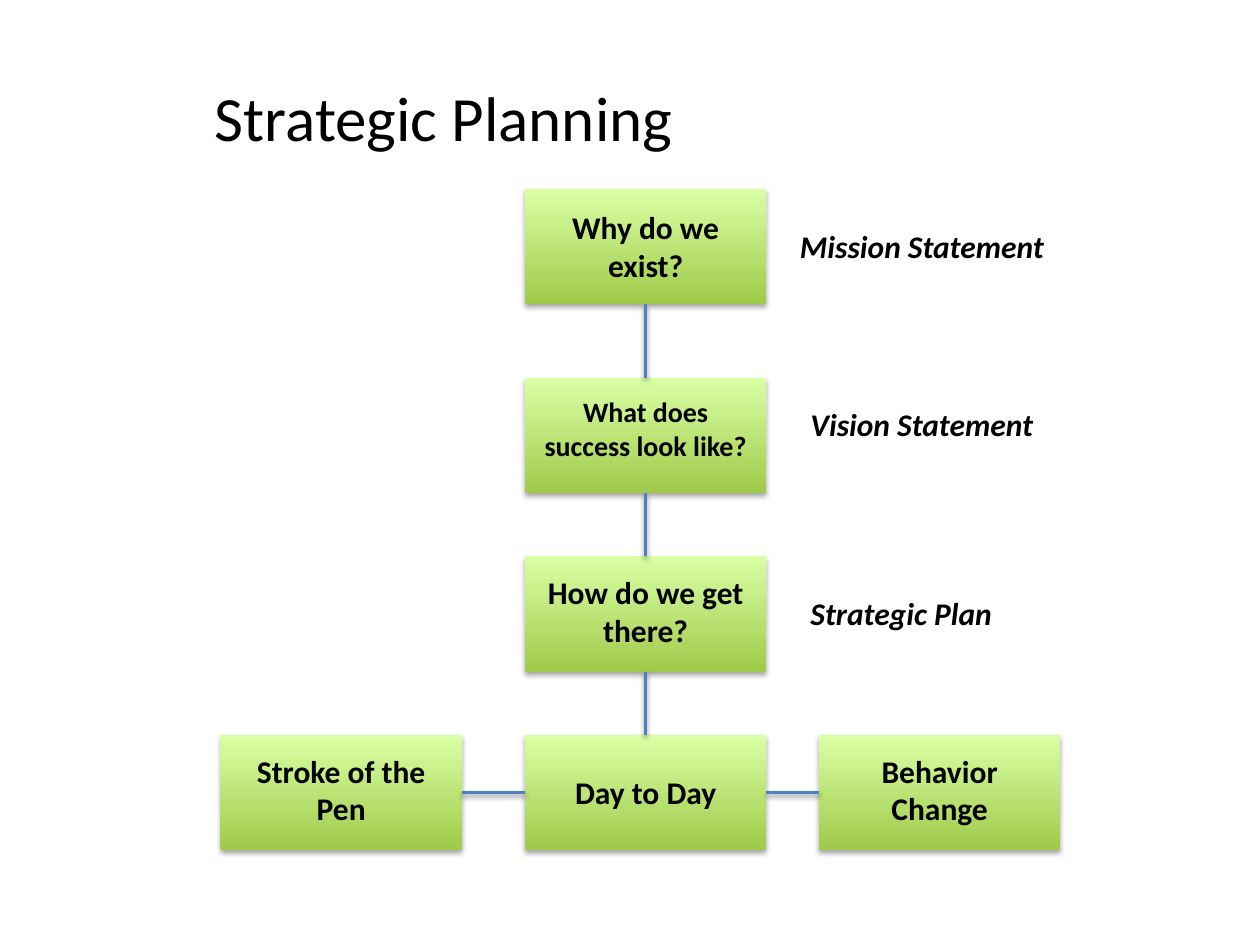
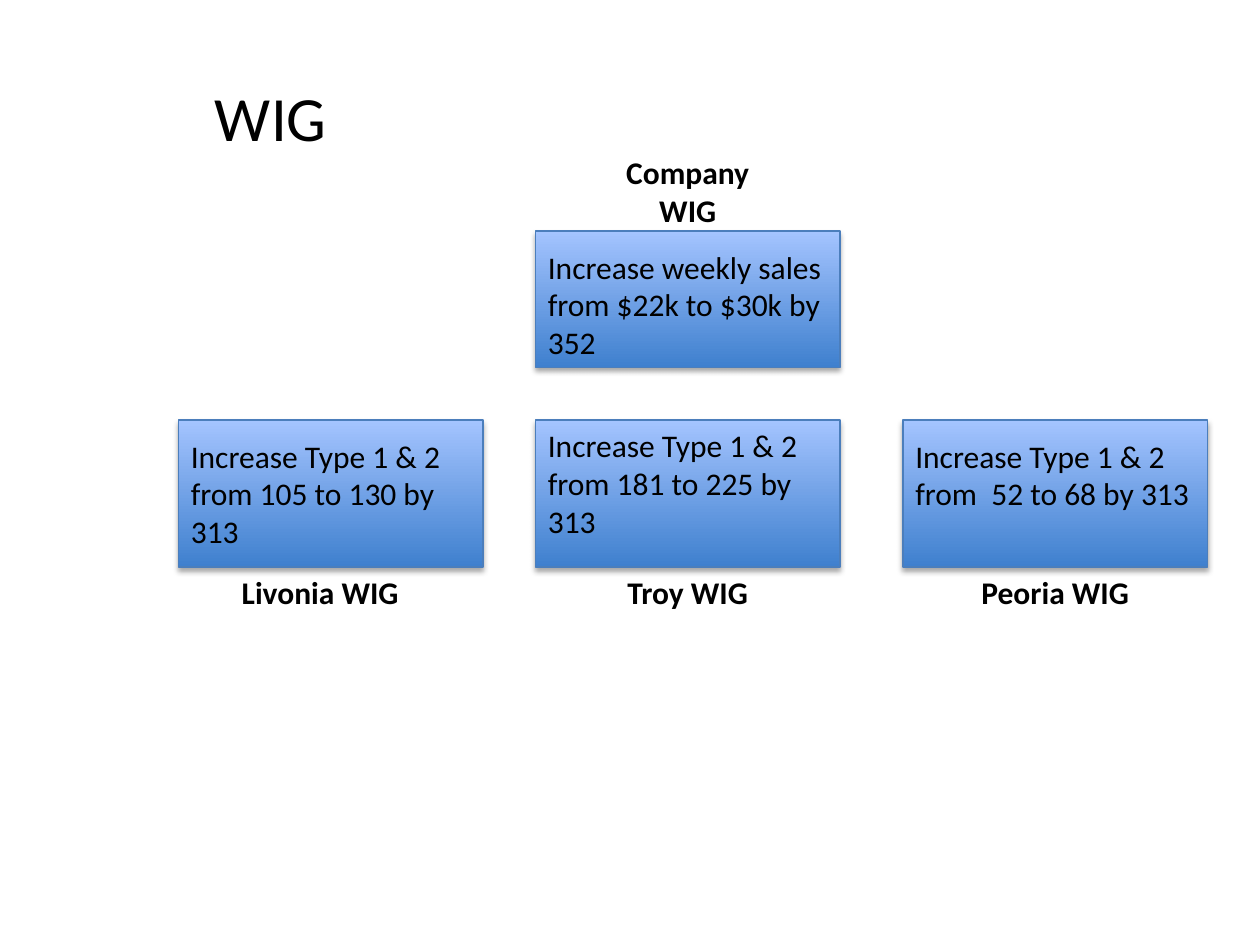
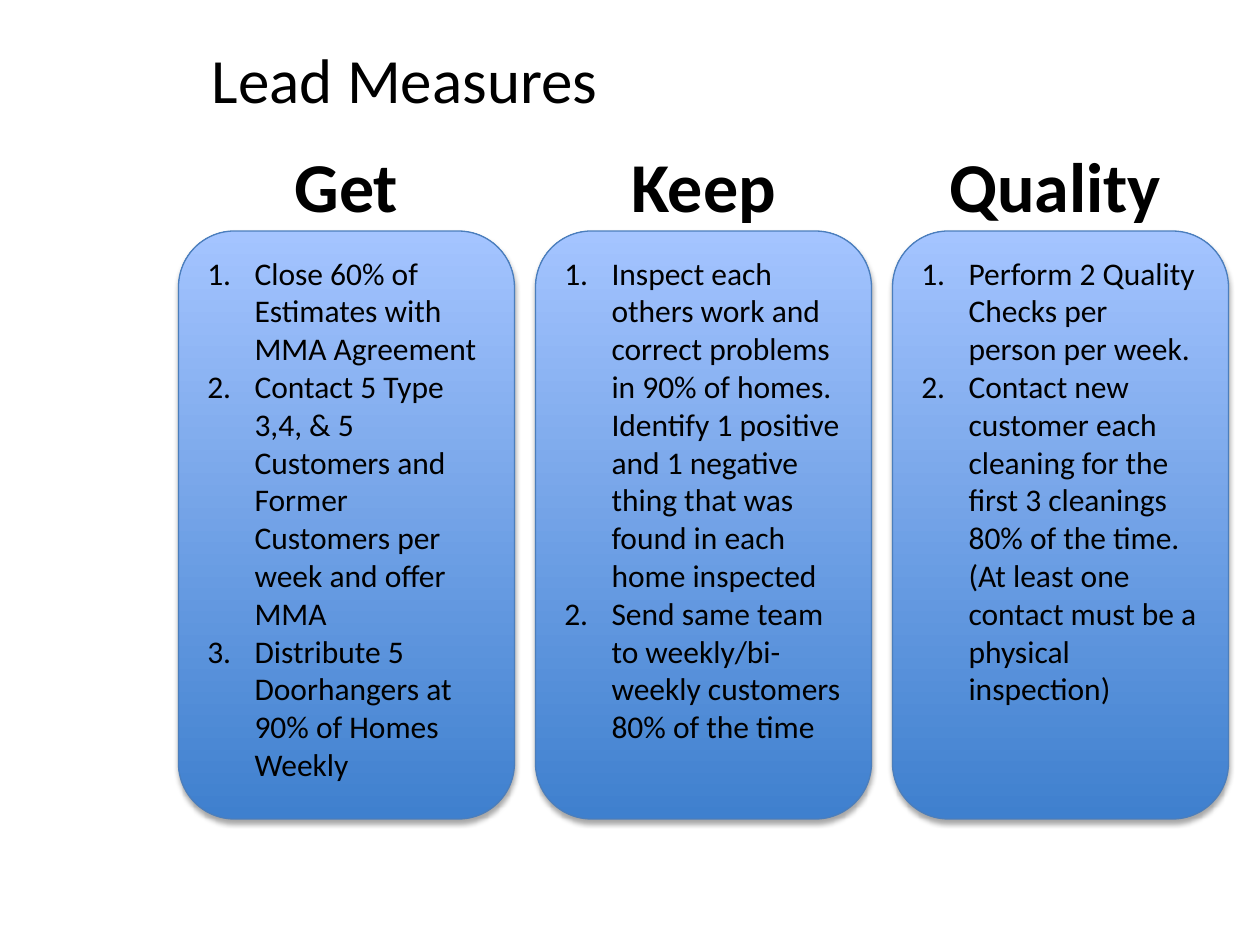
from dataclasses import dataclass
from itertools import pairwise

from lxml import etree
from pptx import Presentation
from pptx.dml.color import RGBColor
from pptx.enum.shapes import MSO_CONNECTOR, MSO_SHAPE
from pptx.enum.text import MSO_ANCHOR, MSO_AUTO_SIZE, PP_ALIGN
from pptx.oxml.ns import qn
from pptx.util import Emu, Pt

# Shared look
PX = 7620  # EMU per px, 120 px to the inch
FONT = "Calibri"
BLACK = "000000"
GREEN = ("A0CA4A", "DAFFA5")  # bottom, top
BLUE = ("3F80CE", "A4C4FF")
BLUE_EDGE = "4B7EBC"
LINK_BLUE = "4F81BD"
TITLE_SIZE, HEADING_SIZE, BODY_SIZE = 36, 40, 18
NUMBER_INDENT = 45

LEFT, CENTER = PP_ALIGN.LEFT, PP_ALIGN.CENTER
TOP, MIDDLE = MSO_ANCHOR.TOP, MSO_ANCHOR.MIDDLE
NO_FIT, GROW = MSO_AUTO_SIZE.NONE, MSO_AUTO_SIZE.SHAPE_TO_FIT_TEXT
RECT, ROUNDED = MSO_SHAPE.RECTANGLE, MSO_SHAPE.ROUNDED_RECTANGLE
STRAIGHT = MSO_CONNECTOR.STRAIGHT


@dataclass(frozen=True)
class Box:
    left: int
    top: int
    width: int
    height: int


@dataclass(frozen=True)
class Label:
    text: str
    box: Box
    size: int = BODY_SIZE
    bold: bool = True
    italic: bool = False
    align: PP_ALIGN = CENTER


@dataclass(frozen=True)
class Step:
    question: str
    left: int
    top: int
    text_top: int
    text_height: int = 85
    size: int = BODY_SIZE


@dataclass(frozen=True)
class Goal:
    text: str
    card: Box
    text_top: int
    text_height: int
    owner: str
    owner_box: Box


@dataclass(frozen=True)
class Measure:
    heading: str
    heading_inset: int
    heading_width: int
    actions: tuple[str, ...]


def px(length: int) -> Emu:
    return Emu(length * PX)


def place(box: Box) -> tuple[Emu, ...]:
    return px(box.left), px(box.top), px(box.width), px(box.height)


def rgb(color: str) -> RGBColor:
    return RGBColor.from_string(color)


def style_font(font, size: int, bold: bool = False, italic: bool = False) -> None:
    font.name, font.size = FONT, Pt(size)
    font.bold, font.italic = bold, italic
    font.color.rgb = rgb(BLACK)


def add_shadow(shape, opacity: int, distance: float) -> None:
    effects = etree.SubElement(shape._element.spPr, qn("a:effectLst"))
    shadow = etree.SubElement(
        effects, qn("a:outerShdw"), blurRad=str(Pt(3.1)), dist=str(Pt(distance)),
        dir="5400000", rotWithShape="0")
    color = etree.SubElement(shadow, qn("a:srgbClr"), val=BLACK)
    etree.SubElement(color, qn("a:alpha"), val=str(opacity * 1000))


def add_label(slide, label: Label, anchor: MSO_ANCHOR = TOP,
              fit: MSO_AUTO_SIZE = GROW) -> None:
    frame = slide.shapes.add_textbox(*place(label.box)).text_frame
    frame.word_wrap = True
    frame.auto_size = fit
    frame.vertical_anchor = anchor
    frame.text = label.text
    paragraph = frame.paragraphs[0]
    paragraph.alignment = label.align
    style_font(paragraph.runs[0].font, label.size, label.bold, label.italic)


def add_card(slide, box: Box, colors: tuple[str, str], edge: str | None = None,
             outline: MSO_SHAPE = RECT):
    card = slide.shapes.add_shape(outline, *place(box))
    card.fill.gradient()
    card.fill.gradient_angle = 90
    for stop, color in zip(card.fill.gradient_stops, colors):
        stop.color.rgb = rgb(color)
    if edge:
        card.line.color.rgb = rgb(edge)
        card.line.width = Pt(0.75)
    else:
        card.line.fill.background()
    add_shadow(card, 35, 1.8)
    return card


def add_link(slide, x1: int, y1: int, x2: int, y2: int) -> None:
    link = slide.shapes.add_connector(STRAIGHT, px(x1), px(y1), px(x2), px(y2))
    link.line.color.rgb = rgb(LINK_BLUE)
    link.line.width = Pt(2)
    add_shadow(link, 38, 1.6)


def add_numbered_list(card, items: tuple[str, ...]) -> None:
    frame = card.text_frame
    frame.word_wrap = True
    frame.vertical_anchor = TOP
    frame.text = "\n".join(items)
    for paragraph in frame.paragraphs:
        paragraph.alignment = LEFT
        properties = paragraph._p.get_or_add_pPr()
        properties.set("marL", str(px(NUMBER_INDENT)))
        properties.set("indent", str(-px(NUMBER_INDENT)))
        etree.SubElement(properties, qn("a:buFont"), typeface="+mj-lt")
        etree.SubElement(properties, qn("a:buAutoNum"), type="arabicPeriod")
        for run in paragraph.runs:
            style_font(run.font, BODY_SIZE)


def add_titled_slide(deck, title: str, left: int = 193, top: int = 36):
    slide = deck.slides.add_slide(deck.slide_layouts[6])
    heading = Label(title, Box(left, top, 1080, 150), TITLE_SIZE, bold=False, align=LEFT)
    add_label(slide, heading, MIDDLE, NO_FIT)
    return slide


# Strategic planning
STEP_WIDTH, STEP_HEIGHT = 230, 110
DOWNWARD = (
    Step("Why do we exist?", 500, 180, 192),
    Step("What does success look like?", 500, 360, 370, 77, 16),
    Step("How do we get there?", 500, 530, 540),
    Step("Day to Day", 500, 700, 730, 48),
)
ACROSS = (
    Step("Stroke of the Pen", 210, 700, 710),
    DOWNWARD[-1],
    Step("Behavior Change", 780, 700, 710),
)
DOCUMENTS = (
    ("Mission Statement", 750, 210),
    ("Vision Statement", 760, 380),
    ("Strategic Plan", 760, 560),
)


def build_planning(deck) -> None:
    slide = add_titled_slide(deck, "Strategic Planning")
    steps = (*DOWNWARD, ACROSS[0], ACROSS[-1])
    for step in steps:
        add_card(slide, Box(step.left, step.top, STEP_WIDTH, STEP_HEIGHT), GREEN)
    for upper, lower in pairwise(DOWNWARD):
        middle = upper.left + STEP_WIDTH // 2
        add_link(slide, middle, upper.top + STEP_HEIGHT, middle, lower.top)
    for before, after in pairwise(ACROSS):
        middle = before.top + STEP_HEIGHT // 2
        add_link(slide, before.left + STEP_WIDTH, middle, after.left, middle)
    for step in steps:
        box = Box(step.left, step.text_top, STEP_WIDTH, step.text_height)
        add_label(slide, Label(step.question, box, step.size))
    for document, left, top in DOCUMENTS:
        add_label(slide, Label(document, Box(left, top, 270, 48), italic=True, align=LEFT))


# Goals of the company and its branches
GOALS = (
    Goal("Increase weekly sales from $22k to $30k by 352", Box(510, 220, 290, 130),
         230, 121, "Company WIG", Box(560, 140, 190, 85)),
    Goal("Increase Type 1 & 2 from 105 to 130 by 313", Box(170, 400, 290, 140),
         410, 121, "Livonia WIG", Box(210, 540, 190, 48)),
    Goal("Increase Type 1 & 2 from 181 to 225 by 313", Box(510, 400, 290, 140),
         400, 121, "Troy WIG", Box(560, 540, 190, 48)),
    Goal("Increase Type 1 & 2 from  52 to 68 by 313", Box(860, 400, 290, 140),
         410, 85, "Peoria WIG", Box(910, 540, 190, 48)),
)


def build_goals(deck) -> None:
    slide = add_titled_slide(deck, "WIG")
    for goal in GOALS:
        add_card(slide, goal.card, BLUE, BLUE_EDGE)
        box = Box(goal.card.left, goal.text_top, goal.card.width, goal.text_height)
        add_label(slide, Label(goal.text, box, bold=False, align=LEFT))
        add_label(slide, Label(goal.owner, goal.owner_box))


# Lead measures
MEASURE_LEFT, MEASURE_STEP = 170, 340
MEASURES = (
    Measure("Get", 50, 220, (
        "Close 60% of Estimates with MMA Agreement",
        "Contact 5 Type 3,4, & 5 Customers and Former Customers per week and offer MMA",
        "Distribute 5 Doorhangers at 90% of Homes Weekly",
    )),
    Measure("Keep", 50, 220, (
        "Inspect each others work and correct problems in 90% of homes. Identify "
        "1 positive and 1 negative thing that was found in each home inspected",
        "Send same team to weekly/bi-weekly customers 80% of the time",
    )),
    Measure("Quality", 30, 250, (
        "Perform 2 Quality Checks per person per week.",
        "Contact new customer each cleaning for the first 3 cleanings 80% of the time. "
        "(At least one contact must be a physical inspection)",
    )),
)


def build_measures(deck) -> None:
    slide = add_titled_slide(deck, "Lead Measures", 190, 0)
    for column, measure in enumerate(MEASURES):
        left = MEASURE_LEFT + column * MEASURE_STEP
        card = add_card(slide, Box(left, 220, 320, 560), BLUE, BLUE_EDGE, ROUNDED)
        add_numbered_list(card, measure.actions)
        box = Box(left + measure.heading_inset, 130, measure.heading_width, 92)
        add_label(slide, Label(measure.heading, box, HEADING_SIZE))


def main() -> None:
    deck = Presentation()
    deck.slide_width, deck.slide_height = px(1200), px(900)
    build_planning(deck)
    build_goals(deck)
    build_measures(deck)
    deck.save("out.pptx")


if __name__ == "__main__":
    main()
